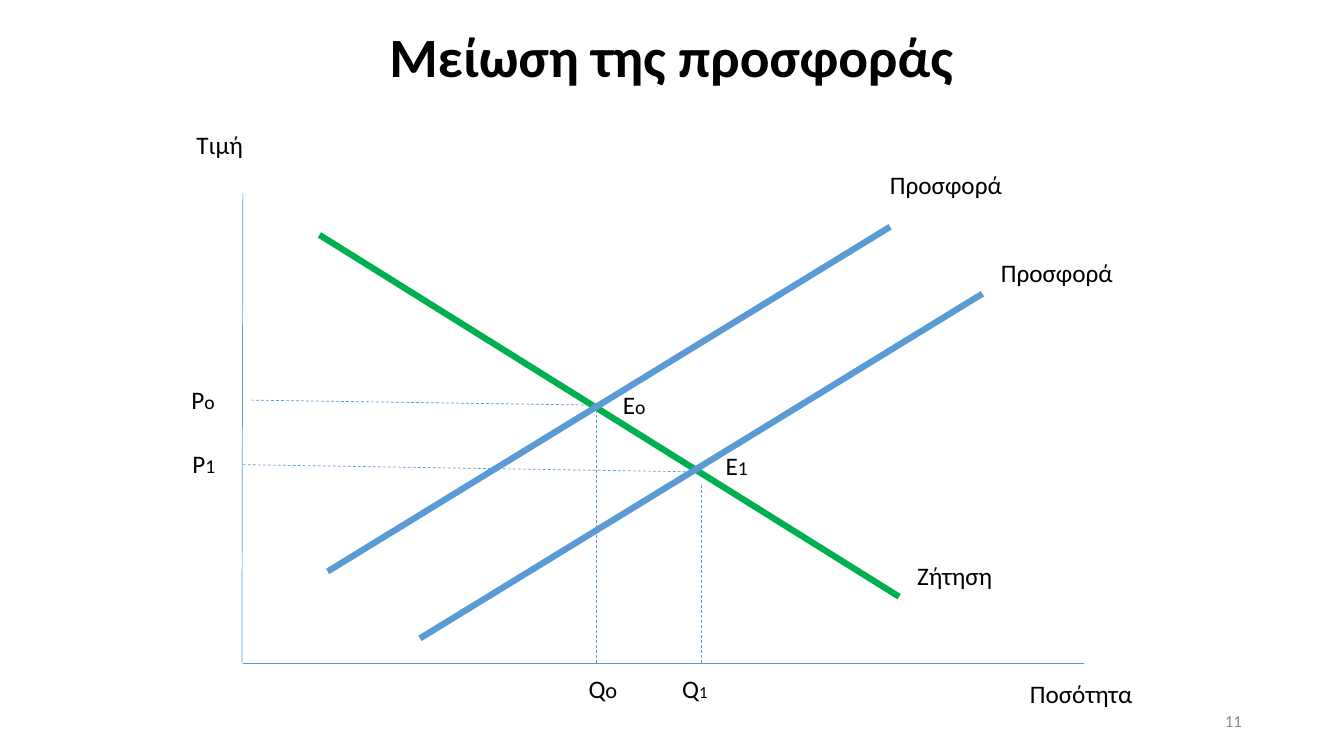
"""Build a slide showing a supply and demand diagram with two equilibria."""
from pptx import Presentation
from pptx.dml.color import RGBColor
from pptx.enum.dml import MSO_LINE
from pptx.enum.shapes import MSO_CONNECTOR
from pptx.enum.text import MSO_ANCHOR, MSO_AUTO_SIZE, PP_ALIGN
from pptx.oxml.ns import qn
from pptx.util import Pt
from lxml import etree

STRAIGHT = MSO_CONNECTOR.STRAIGHT
DASH = MSO_LINE.DASH
MIDDLE = MSO_ANCHOR.MIDDLE
NO_FIT, GROW = MSO_AUTO_SIZE.NONE, MSO_AUTO_SIZE.SHAPE_TO_FIT_TEXT
LEFT, CENTER, RIGHT = PP_ALIGN.LEFT, PP_ALIGN.CENTER, PP_ALIGN.RIGHT

THEME = {
    "font": "Calibri",
    "black": "000000", "gray": "8C8C8C", "blue": "5B9BD5", "green": "00B050",
    "title": 39.6, "body": 18, "small": 12,
    "thin": 0.5, "thick": 4.5,
}
WIDTH, HEIGHT = 960, 540
ROW = 28.8

TITLE = "Μείωση της προσφοράς"
TITLE_BOX = (169.2, 18, 620.64, 48.96)
NUMBER = "11"
NUMBER_BOX = (678.2, 500.4, 216, ROW)

BASE = 473.8
AXES = [((173.5, 138.2), (172.8, BASE)), ((774, BASE), (173.5, BASE))]
DEMAND = ((228.2, 167.8), (642.2, 426.2))
SUPPLY = ((234, 408.2), (635.8, 162))
SHIFT = (66, 47.8)
GUIDES = [
    ((179.3, 285.8), (426.2, 289.4)),
    ((426.2, BASE), (426.2, 294.5)),
    ((173.5, 331.9), (492.5, 337)),
    ((501.1, BASE), (501.1, 345.6)),
]
NAMES = [
    ("Τιμή", 133.2, 88.6, 80.6),
    ("Ποσότητα", 728.6, 481, 112.3),
    ("Προσφορά", 628.6, 117.4, 133.2),
    ("Προσφορά", 707.8, 180, 133.2),
    ("Ζήτηση", 648, 396.7, 133.2),
]
MARKS = [
    ("P", "o", 14, 129.6, 270.7, 31.7),
    ("P", "1", 14, 130.3, 316.8, 31),
    ("E", "o", 14, 437.8, 274.3, 31),
    ("E", "1", 14, 511.2, 318.2, 30.2),
    ("Q", "o", 16, 413.3, 477.4, 35.3),
    ("Q", "1", 12, 480.2, 477.4, 33.1),
]


def paint(name):
    return RGBColor.from_string(THEME[name])


def add_run(para, text, size, color="black", bold=False):
    run = para.add_run()
    run.text = text
    font = run.font
    font.name, font.size, font.bold = THEME["font"], Pt(size), bold
    font.color.rgb = paint(color)


def add_label(slide, box, runs, wrap=True, align=LEFT, color="black"):
    frame = slide.shapes.add_textbox(*map(Pt, box)).text_frame
    frame.word_wrap, frame.auto_size = wrap, GROW
    para = frame.paragraphs[0]
    para.alignment = align
    for text, size in runs:
        add_run(para, text, size, color)
    return frame


def add_line(slide, ends, color="blue", width="thin", dash=None):
    start, end = ends
    line = slide.shapes.add_connector(STRAIGHT, *map(Pt, start + end))
    line.line.color.rgb = paint(color)
    line.line.width = Pt(THEME[width])
    if dash:
        line.line.dash_style = dash
    etree.SubElement(line._element.spPr, qn("a:effectLst"))


def set_title(slide):
    title = slide.shapes.title
    title.left, title.top, title.width, title.height = map(Pt, TITLE_BOX)
    frame = title.text_frame
    frame.auto_size, frame.vertical_anchor = NO_FIT, MIDDLE
    para = frame.paragraphs[0]
    para.alignment, para.line_spacing = CENTER, 0.9
    add_run(para, TITLE, THEME["title"], bold=True)


def main():
    deck = Presentation()
    deck.slide_width, deck.slide_height = Pt(WIDTH), Pt(HEIGHT)
    slide = deck.slides.add_slide(deck.slide_layouts.get_by_name("Title Only"))
    set_title(slide)

    for axis in AXES:
        add_line(slide, axis)
    add_line(slide, DEMAND, "green", "thick")
    for step in range(2):
        moved = [(x + step * SHIFT[0], y + step * SHIFT[1]) for x, y in SUPPLY]
        add_line(slide, moved, "blue", "thick")
    for guide in GUIDES:
        add_line(slide, guide, dash=DASH)

    for text, x, y, width in NAMES:
        add_label(slide, (x, y, width, ROW), [(text, THEME["body"])])
    for letter, index, size, x, y, width in MARKS:
        runs = [(letter, THEME["body"]), (index, size)]
        add_label(slide, (x, y, width, ROW), runs, wrap=False)

    frame = add_label(slide, NUMBER_BOX, [(NUMBER, THEME["small"])],
                      align=RIGHT, color="gray")
    frame.auto_size, frame.vertical_anchor = NO_FIT, MIDDLE
    deck.save("out.pptx")


if __name__ == "__main__":
    main()
